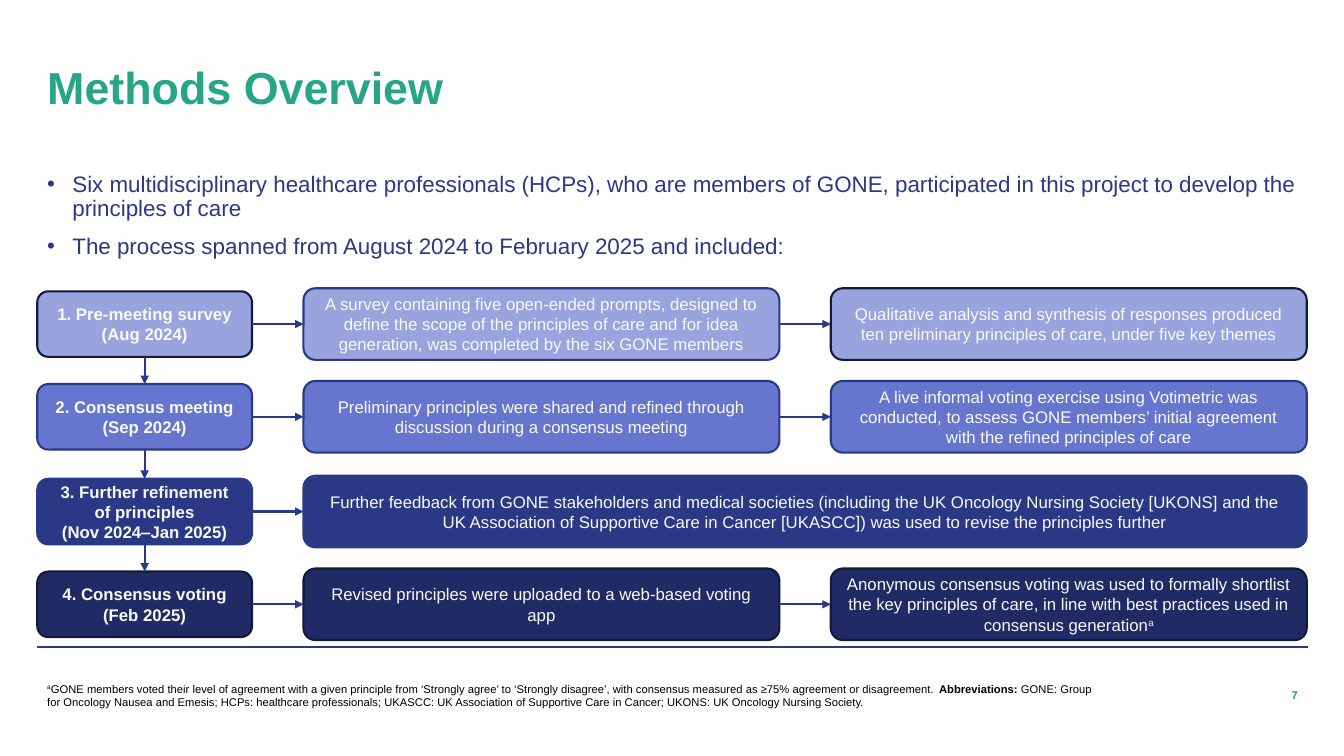
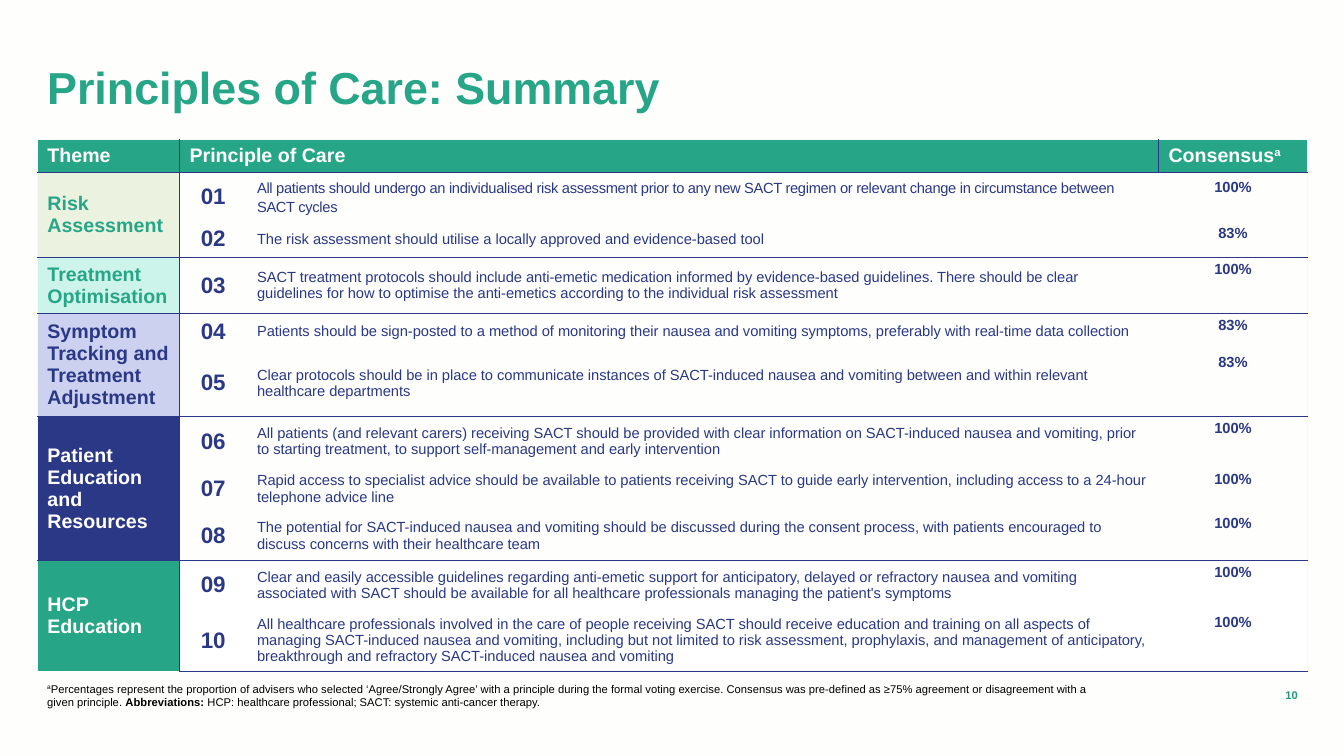
from dataclasses import dataclass

from lxml.etree import SubElement
from pptx import Presentation
from pptx.dml.color import RGBColor
from pptx.enum.shapes import MSO_CONNECTOR, MSO_SHAPE
from pptx.enum.text import MSO_ANCHOR as ANCHOR, PP_ALIGN as ALIGN
from pptx.oxml.ns import qn
from pptx.util import Inches, Pt

FONT = "Arial"
PAPER, PALE, WHITE, BLACK = "FEFEFD", "F8FBF3", "FFFFFF", "000000"
GREEN, DEEP_GREEN = "26A687", "23987C"
INK, DARK, NAVY, BLUE, LILAC = "12193A", "202A64", "2A3885", "6676CF", "99A4DF"
LIME, MINT, LAVENDER = "EBF2E0", "CDF4EA", "CCD1EF"

LEFT, WIDTH = 0.37, 12.6
LABEL_W, LABEL_H, STEP_W, STEP_H, GAP = 2.13, 0.65, 4.72, 0.71, 0.51
COLUMNS = (1.41, 0.67, 9.04, 1.48)
ROW_HEIGHTS = (0.33, 0.48, 0.36, 0.56, 0.36, 0.66, 0.5, 0.44, 0.49, 0.49, 0.61)
NO_STYLE_NO_GRID = "{2D5ABB26-0587-4C30-8999-92F81FD0307C}"


@dataclass
class Span:
    text: str
    bold: bool = False
    superscript: bool = False


@dataclass
class Step:
    text: list[Span]
    outline: str = NAVY


@dataclass
class Stage:
    top: float
    fill: str
    outline: str
    label: list[str]
    steps: list[Step]
    label_indent: float = 0


@dataclass
class Principle:
    text: str
    consensus: str
    line_spacing: float = 1.0
    tracking: float = 0


@dataclass
class Theme:
    name: str
    fill: str
    color: str
    principles: list[Principle]
    row_fill: str | None = None


STAGES = [
    Stage(2.86, LILAC, INK, ["1. Pre-meeting survey (Aug 2024)"], [
        Step([Span("A survey containing five open-ended prompts, designed to define the scope of the "
                   "principles of care and for idea generation, was completed by the six GONE members")]),
        Step([Span("Qualitative analysis and synthesis of responses produced ten preliminary principles "
                   "of care, under five key themes")], INK)]),
    Stage(3.78, BLUE, NAVY, ["2. Consensus meeting (Sep 2024)"], [
        Step([Span("Preliminary principles were shared and refined through discussion during a "
                   "consensus meeting")]),
        Step([Span("A live informal voting exercise using Votimetric was conducted, to assess GONE "
                   "members’ initial agreement with the refined principles of care")])]),
    Stage(4.72, NAVY, NAVY, ["3. Further refinement", "of principles", "(Nov 2024‒Jan 2025)"], [
        Step([Span("Further feedback from GONE stakeholders and medical societies (including the UK "
                   "Oncology Nursing Society [UKONS] and the UK Association of Supportive Care in Cancer "
                   "[UKASCC]) was used to revise the principles further")])], -0.08),
    Stage(5.64, DARK, INK, ["4. Consensus voting", "(Feb 2025)"], [
        Step([Span("Revised principles were uploaded to a web-based voting app")], INK),
        Step([Span("Anonymous consensus voting was used to formally shortlist the key principles of care, "
                   "in line with best practices used in consensus generation"),
              Span("a", superscript=True)], INK)], -0.24),
]

THEMES = [
    Theme("Risk Assessment", LIME, GREEN, [
        Principle("All patients should undergo an individualised risk assessment prior to any new SACT "
                  "regimen or relevant change in circumstance between SACT cycles", "100%", 1.15, -0.2),
        Principle("The risk assessment should utilise a locally approved and evidence-based tool", "83%")]),
    Theme("Treatment Optimisation", MINT, GREEN, [
        Principle("SACT treatment protocols should include anti-emetic medication informed by "
                  "evidence-based guidelines. There should be clear guidelines for how to optimise the "
                  "anti-emetics according to the individual risk assessment", "100%")]),
    Theme("Symptom Tracking and Treatment Adjustment", LAVENDER, NAVY, [
        Principle("Patients should be sign-posted to a method of monitoring their nausea and vomiting "
                  "symptoms, preferably with real-time data collection", "83%"),
        Principle("Clear protocols should be in place to communicate instances of SACT-induced nausea and "
                  "vomiting between and within relevant healthcare departments", "83%")]),
    Theme("Patient Education and Resources", NAVY, WHITE, [
        Principle("All patients (and relevant carers) receiving SACT should be provided with clear "
                  "information on SACT-induced nausea and vomiting, prior to starting treatment, to "
                  "support self-management and early intervention", "100%"),
        Principle("Rapid access to specialist advice should be available to patients receiving SACT to "
                  "guide early intervention, including access to a 24-hour telephone advice line", "100%"),
        Principle("The potential for SACT-induced nausea and vomiting should be discussed during the "
                  "consent process, with patients encouraged to discuss concerns with their healthcare "
                  "team", "100%")]),
    Theme("HCP Education", GREEN, WHITE, [
        Principle("Clear and easily accessible guidelines regarding anti-emetic support for anticipatory, "
                  "delayed or refractory nausea and vomiting associated with SACT should be available for "
                  "all healthcare professionals managing the patient's symptoms", "100%"),
        Principle("All healthcare professionals involved in the care of people receiving SACT should "
                  "receive education and training on all aspects of managing SACT-induced nausea and "
                  "vomiting, including but not limited to risk assessment, prophylaxis, and management of "
                  "anticipatory, breakthrough and refractory SACT-induced nausea and vomiting", "100%")],
          WHITE),
]


def rgb(color: str) -> RGBColor:
    return RGBColor.from_string(color)


def write(tf, paragraphs: list[list[Span]], size: float, color: str, align=ALIGN.LEFT,
          spacing: float = 1.0, tracking: float = 0) -> None:
    """Fill an empty text frame; each paragraph is a list of spans."""
    tf.word_wrap = True
    for i, spans in enumerate(paragraphs):
        p = tf.add_paragraph() if i else tf.paragraphs[0]
        p.alignment, p.line_spacing = align, spacing
        for span in spans:
            r = p.add_run()
            r.text = span.text
            r.font.name, r.font.size, r.font.bold = FONT, Pt(size), span.bold
            r.font.color.rgb = rgb(color)
            if span.superscript:
                r.font._element.set("baseline", "30000")
            if tracking:
                r.font._element.set("spc", str(round(tracking * 100)))


def indent(p, margin: float, first_line: float):
    pPr = p._p.get_or_add_pPr()
    pPr.set("marL", str(Inches(margin)))
    pPr.set("indent", str(Inches(first_line)))
    return pPr


def add_text_box(s, left: float, top: float, width: float, height: float, anchor=ANCHOR.MIDDLE):
    tf = s.shapes.add_textbox(Inches(left), Inches(top), Inches(width), Inches(height)).text_frame
    tf.vertical_anchor = anchor
    return tf


def add_base_slide(prs, title: str, footnote: list[Span], number: int):
    """Add a slide with the background, title, footnote and page number."""
    s = prs.slides.add_slide(prs.slide_layouts[6])
    s.background.fill.solid()
    s.background.fill.fore_color.rgb = rgb(PAPER)
    add_line(s, LEFT, 6.42, LEFT + WIDTH, 6.42, 1)
    write(add_text_box(s, LEFT, 0.4, WIDTH, 0.98), [[Span(title, bold=True)]], 32, GREEN, spacing=0.9)
    write(add_text_box(s, LEFT, 6.7, 10.68, 0.4), [footnote], 8, BLACK)
    write(add_text_box(s, 11.4, 6.7, 1.57, 0.4), [[Span(str(number), bold=True)]], 8, DEEP_GREEN,
          ALIGN.RIGHT)
    return s


def add_bullets(s, texts: list[str]) -> None:
    tf = add_text_box(s, LEFT, 1.67, WIDTH, 1.1, ANCHOR.TOP)
    write(tf, [[Span(text)] for text in texts], 16, NAVY, spacing=0.9)
    for p in tf.paragraphs:
        p.space_before = Pt(10)
        pPr = indent(p, 0.25, -0.25)
        SubElement(pPr, qn("a:buFont"), typeface=FONT)
        SubElement(pPr, qn("a:buChar"), char="•")


def add_box(s, left: float, top: float, width: float, height: float, fill: str, outline: str,
            paragraphs: list[list[Span]]):
    sp = s.shapes.add_shape(MSO_SHAPE.ROUNDED_RECTANGLE, Inches(left), Inches(top), Inches(width),
                            Inches(height))
    sp.shadow.inherit = False
    sp.fill.solid()
    sp.fill.fore_color.rgb = rgb(fill)
    sp.line.color.rgb, sp.line.width = rgb(outline), Pt(1.5)
    sp.text_frame.vertical_anchor = ANCHOR.MIDDLE
    write(sp.text_frame, paragraphs, 12, PALE, ALIGN.CENTER)
    return sp


def add_line(s, x1: float, y1: float, x2: float, y2: float, width: float):
    line = s.shapes.add_connector(MSO_CONNECTOR.STRAIGHT, Inches(x1), Inches(y1), Inches(x2), Inches(y2))
    line.line.color.rgb, line.line.width = rgb(NAVY), Pt(width)
    SubElement(line._element.spPr, qn("a:effectLst"))
    return line


def add_arrow(s, start, start_site: int, end, end_site: int) -> None:
    arrow = add_line(s, 0, 0, 1, 1, 1.5)
    arrow.begin_connect(start, start_site)
    arrow.end_connect(end, end_site)
    SubElement(arrow.line._get_or_add_ln(), qn("a:tailEnd"), type="triangle")


def add_flow(s) -> None:
    above = None
    for stage in STAGES:
        label = add_box(s, LEFT, stage.top + (STEP_H - LABEL_H) / 2, LABEL_W, LABEL_H, stage.fill,
                        stage.outline, [[Span(line, bold=True)] for line in stage.label])
        if stage.label_indent:
            indent(label.text_frame.paragraphs[0], 0, stage.label_indent)
        if above is not None:
            add_arrow(s, above, 2, label, 0)
        above = before = label
        left = LEFT + LABEL_W + GAP
        width = STEP_W if len(stage.steps) == 2 else 2 * STEP_W + GAP
        for step in stage.steps:
            box = add_box(s, left, stage.top, width, STEP_H, stage.fill, step.outline, [step.text])
            add_arrow(s, before, 3, box, 1)
            before = box
            left += width + GAP


def set_borders(cell, **edges: tuple[str, float] | None) -> None:
    """Draw the L, R, T and B edges as (colour, points), or as no line."""
    tcPr = cell._tc.get_or_add_tcPr()
    for side in "LRTB":
        edge = edges.get(side)
        if edge is None:
            SubElement(SubElement(tcPr, qn(f"a:ln{side}"), w="0"), qn("a:noFill"))
            continue
        color, width = edge
        ln = SubElement(tcPr, qn(f"a:ln{side}"), w=str(Pt(width)))
        SubElement(SubElement(ln, qn("a:solidFill")), qn("a:srgbClr"), val=color)


def rule_table(table, starts: set[int]) -> None:
    """Rule off each theme, the theme column and the header cells."""
    rule, edge = (NAVY, 0.5), (PALE, 1)
    last_row, last_col = len(ROW_HEIGHTS), len(COLUMNS) - 1
    for row in range(last_row):
        uprights = {0: edge, 1: rule, last_col + 1: edge} | ({last_col: rule} if row == 0 else {})
        levels = {0: edge, last_row: rule} | {start: rule for start in starts}
        for col in range(last_col + 1):
            cell = table.cell(row, col)
            cell.margin_top = cell.margin_bottom = Inches(0.04)
            set_borders(cell, L=uprights.get(col), R=uprights.get(col + 1),
                        T=levels.get(row), B=levels.get(row + 1))


def add_principles_table(s) -> None:
    frame = s.shapes.add_table(len(ROW_HEIGHTS), len(COLUMNS), Inches(LEFT), Inches(1.38),
                               Inches(WIDTH), Inches(sum(ROW_HEIGHTS)))
    table = frame.table
    table._tbl.tblPr.find(qn("a:tableStyleId")).text = NO_STYLE_NO_GRID
    for column, width in zip(table.columns, COLUMNS):
        column.width = Inches(width)
    for row, height in zip(table.rows, ROW_HEIGHTS):
        row.height = Inches(height)
    starts = {1 + sum(len(t.principles) for t in THEMES[:i]) for i in range(len(THEMES))}
    rule_table(table, starts)

    def put(row: int, col: int, spans: list[Span], size: float, color: str, fill: str | None,
            align=ALIGN.LEFT, anchor=ANCHOR.MIDDLE, spacing: float = 1.0, tracking: float = 0) -> None:
        cell = table.cell(row, col)
        if fill is None:
            cell.fill.background()
        else:
            cell.fill.solid()
            cell.fill.fore_color.rgb = rgb(fill)
        cell.vertical_anchor = anchor
        write(cell.text_frame, [spans], size, color, align, spacing, tracking)

    table.cell(0, 1).merge(table.cell(0, 2))
    for col, spans in ((0, [Span("Theme", True)]), (1, [Span("Principle of Care", True)]),
                       (3, [Span("Consensus", True), Span("a", True, True)])):
        put(0, col, spans, 14, WHITE, GREEN)
    row = 1
    for theme in THEMES:
        if len(theme.principles) > 1:
            table.cell(row, 0).merge(table.cell(row + len(theme.principles) - 1, 0))
        put(row, 0, [Span(theme.name, True)], 14, theme.color, theme.fill)
        for item in theme.principles:
            put(row, 1, [Span(f"{row:02}", True)], 16, NAVY, theme.row_fill, ALIGN.CENTER)
            put(row, 2, [Span(item.text)], 10.5, NAVY, theme.row_fill, spacing=item.line_spacing,
                tracking=item.tracking)
            put(row, 3, [Span(item.consensus, True)], 10.5, NAVY, theme.row_fill, ALIGN.CENTER,
                ANCHOR.TOP, item.line_spacing)
            row += 1


def main() -> None:
    prs = Presentation()
    prs.slide_width, prs.slide_height = Inches(13.33), Inches(7.5)

    methods = add_base_slide(prs, "Methods Overview", [
        Span("a", superscript=True),
        Span("GONE members voted their level of agreement with a given principle from ‘Strongly agree’ to "
             "‘Strongly disagree’, with consensus measured as ≥75% agreement or disagreement. "),
        Span("Abbreviations: ", bold=True),
        Span("GONE: Group for Oncology Nausea and Emesis; HCPs: healthcare professionals; UKASCC: UK "
             "Association of Supportive Care in Cancer; UKONS: UK Oncology Nursing Society.")], 7)
    add_bullets(methods, [
        "Six multidisciplinary healthcare professionals (HCPs), who are members of GONE, participated in "
        "this project to develop the principles of care",
        "The process spanned from August 2024 to February 2025 and included:"])
    add_flow(methods)

    summary = add_base_slide(prs, "Principles of Care: Summary", [
        Span("a", superscript=True),
        Span("Percentages represent the proportion of advisers who selected ‘Agree/Strongly Agree’ with a "
             "principle during the formal voting exercise. Consensus was pre-defined as ≥75% agreement or "
             "disagreement with a given principle. "),
        Span("Abbreviations: ", bold=True),
        Span("HCP: healthcare professional; SACT: systemic anti-cancer therapy.")], 10)
    add_principles_table(summary)
    prs.save("out.pptx")


if __name__ == "__main__":
    main()
